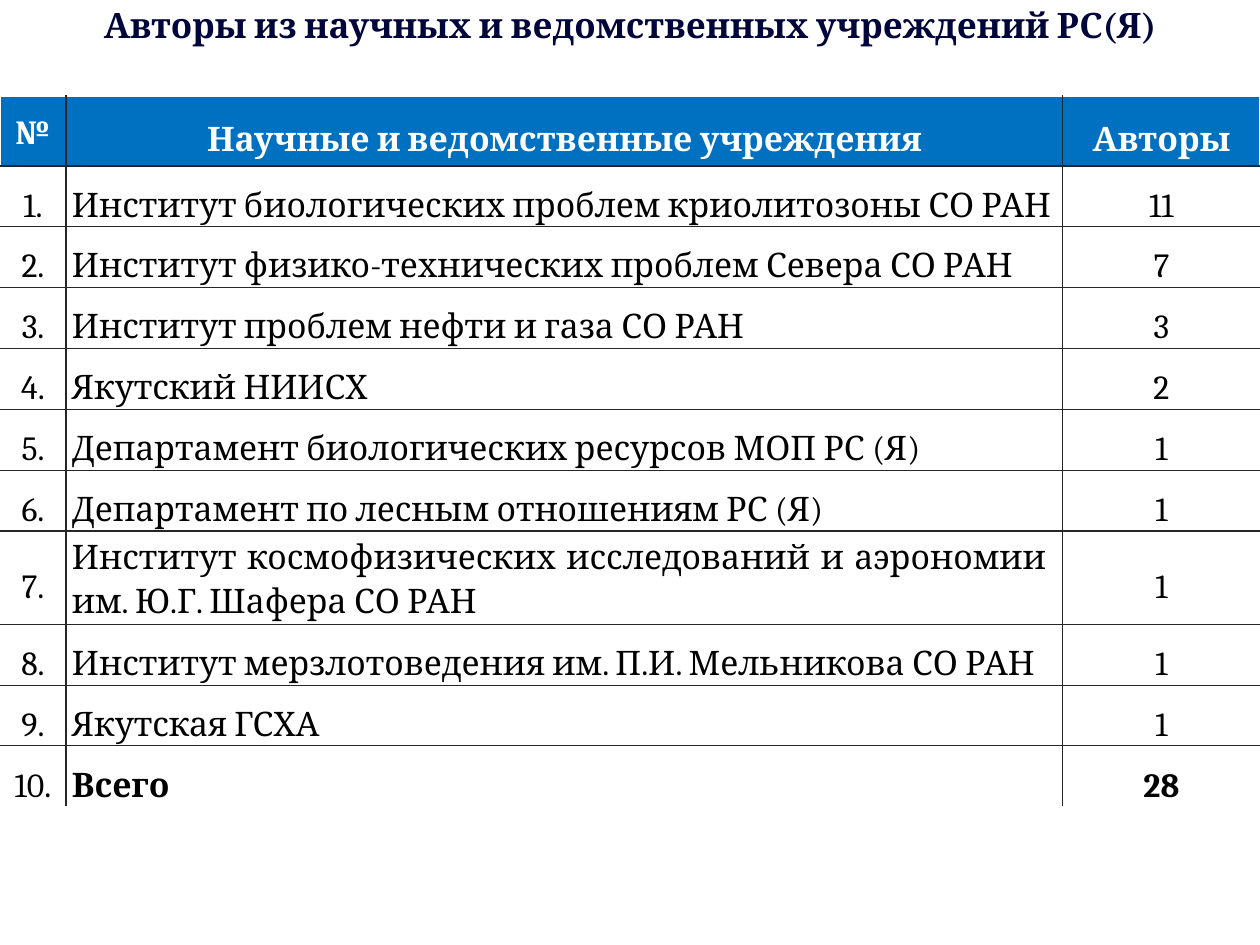
"""Build a slide with a table of authors from scientific and departmental institutions."""
from dataclasses import dataclass

from lxml import etree
from pptx import Presentation
from pptx.dml.color import RGBColor
from pptx.enum.text import MSO_ANCHOR, PP_ALIGN
from pptx.oxml.ns import qn
from pptx.util import Emu, Pt

CENTER, JUSTIFY = PP_ALIGN.CENTER, PP_ALIGN.JUSTIFY
MIDDLE = MSO_ANCHOR.MIDDLE

TITLE = "Авторы из научных и ведомственных учреждений РС(Я)"
HEADERS = ["№", "Научные и ведомственные учреждения", "Авторы"]
INSTITUTIONS = [
    ("Институт биологических проблем криолитозоны СО РАН", 11),
    ("Институт физико-технических проблем Севера СО РАН", 7),
    ("Институт проблем нефти и газа СО РАН", 3),
    ("Якутский НИИСХ", 2),
    ("Департамент биологических ресурсов МОП РС (Я)", 1),
    ("Департамент по лесным отношениям РС (Я)", 1),
    ("Институт космофизических исследований и аэрономии \nим. Ю.Г. Шафера СО РАН", 1),
    ("Институт мерзлотоведения им. П.И. Мельникова СО РАН", 1),
    ("Якутская ГСХА", 1),
    ("Всего", 28),
]


@dataclass(frozen=True)
class Theme:
    font: str = "Cambria"
    title_size: int = 28
    table_size: int = 27
    title: str = "00063A"
    header: str = "0070C0"
    white: str = "FFFFFF"
    text: str = "000000"
    border: str = "262626"
    border_width: int = 1


THEME = Theme()
SLIDE_WIDTH, SLIDE_HEIGHT = 1260, 945
TITLE_TOP, TITLE_HEIGHT = -1, 51
TABLE_TOP = 96
COLUMN_WIDTHS = [66, 997, 197]
HEADER_HEIGHT, ROW_HEIGHT, TWO_LINE_HEIGHT = 70, 60, 92
HEADER_MARGINS, BODY_MARGINS = (4, 4), (6, 0)
LOOSE, TIGHT = 1.5, 1.15


def px(value):
    return Emu(value * 10160)


def write(paragraph, text, size, color, bold, alignment):
    paragraph.alignment = alignment
    for index, line in enumerate(text.split("\n")):
        if index:
            paragraph.add_line_break()
        run = paragraph.add_run()
        run.text = line
        run.font.name = THEME.font
        run.font.size = Pt(size)
        run.font.bold = bold
        run.font.color.rgb = RGBColor.from_string(color)


def set_borders(cell, colors):
    properties = cell._tc.get_or_add_tcPr()
    for side, color in colors.items():
        line = etree.SubElement(properties, qn(f"a:ln{side}"), w=str(Pt(THEME.border_width)))
        fill = etree.SubElement(line, qn("a:solidFill"))
        etree.SubElement(fill, qn("a:srgbClr"), val=color)


def fill_cell(table, row, column, text):
    cell = table.cell(row, column)
    is_header = row == 0
    is_last = row == len(INSTITUTIONS)
    outer_sides = {
        "L": column == 0,
        "R": column == len(HEADERS) - 1,
        "T": is_header,
        "B": is_last,
    }
    set_borders(cell, {
        side: THEME.white if outer else THEME.border for side, outer in outer_sides.items()
    })
    cell.fill.solid()
    cell.fill.fore_color.rgb = RGBColor.from_string(THEME.header if is_header else THEME.white)
    cell.vertical_anchor = MIDDLE
    horizontal, vertical = HEADER_MARGINS if is_header else BODY_MARGINS
    cell.margin_left = cell.margin_right = px(horizontal)
    cell.margin_top = cell.margin_bottom = px(vertical)

    paragraph = cell.text_frame.paragraphs[0]
    is_corner = is_header and column == 0
    paragraph.line_spacing = TIGHT if is_corner or "\n" in text else LOOSE
    if is_corner:
        paragraph.space_after = Pt(10)
    write(
        paragraph,
        text,
        THEME.table_size,
        THEME.white if is_header else THEME.text,
        is_header or (is_last and column > 0),
        JUSTIFY if column == 1 and not is_header else CENTER,
    )


def add_title(slide):
    shape = slide.shapes.add_textbox(0, px(TITLE_TOP), px(SLIDE_WIDTH), px(TITLE_HEIGHT))
    shape.text_frame.word_wrap = True
    paragraph = shape.text_frame.paragraphs[0]
    write(paragraph, TITLE, THEME.title_size, THEME.title, True, CENTER)


def add_authors_table(slide):
    rows = [HEADERS] + [
        (f"{number}.", name, str(authors))
        for number, (name, authors) in enumerate(INSTITUTIONS, 1)
    ]
    heights = [HEADER_HEIGHT] + [
        TWO_LINE_HEIGHT if "\n" in name else ROW_HEIGHT for name, _ in INSTITUTIONS
    ]
    table = slide.shapes.add_table(
        len(rows), len(HEADERS), 0, px(TABLE_TOP), px(SLIDE_WIDTH), px(sum(heights))
    ).table
    for column, width in zip(table.columns, COLUMN_WIDTHS):
        column.width = px(width)
    for row, height in zip(table.rows, heights):
        row.height = px(height)
    for row, texts in enumerate(rows):
        for column, text in enumerate(texts):
            fill_cell(table, row, column, text)


def main():
    presentation = Presentation()
    presentation.slide_width = px(SLIDE_WIDTH)
    presentation.slide_height = px(SLIDE_HEIGHT)
    slide = presentation.slides.add_slide(presentation.slide_layouts[6])
    add_title(slide)
    add_authors_table(slide)
    presentation.save("out.pptx")


if __name__ == "__main__":
    main()
